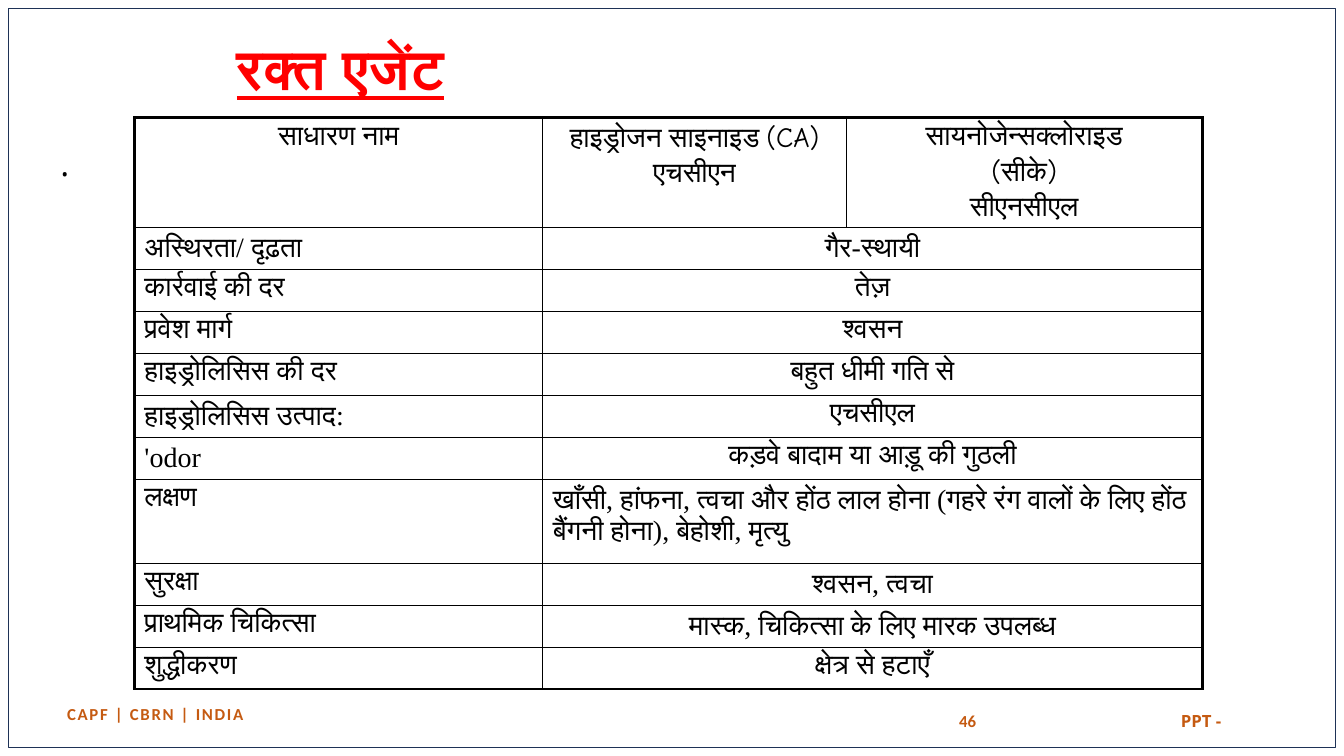
from pptx import Presentation
from pptx.dml.color import RGBColor
from pptx.enum.shapes import MSO_SHAPE
from pptx.enum.text import MSO_ANCHOR, MSO_AUTO_SIZE, PP_ALIGN
from pptx.oxml.ns import qn
from pptx.util import Pt
from lxml import etree

PX = 9525  # EMU in one px, 96 px to the inch
SLIDE_WIDTH, SLIDE_HEIGHT = 1280, 720
COLORS = {"ink": "000000", "title": "FF0000", "footer": "C55A11", "frame": "1E3256"}
LEFT, CENTER = PP_ALIGN.LEFT, PP_ALIGN.CENTER
TOP, MIDDLE = MSO_ANCHOR.TOP, MSO_ANCHOR.MIDDLE
RECTANGLE = MSO_SHAPE.RECTANGLE
COMIC, TIMES, SANS, CALIBRI = "Comic Neue", "Times New Roman", "Open Sans", "Calibri"
NO_GRID_STYLE = "{2D5ABB26-0587-4C30-8999-92F81FD0307C}"
THICK, THIN = Pt(2.25), Pt(1)

COLUMN_WIDTHS = [389, 289, 339]
HEADER_HEIGHT, ROW_HEIGHT = 89, 40
# Each header cell: paragraphs, each a list of (text, font) runs
HEADER = [
    [[("साधारण नाम", COMIC)]],
    [[("हाइड्रोजन साइनाइड (CA)", COMIC)], [("एचसीएन", COMIC)]],
    [[("सायनोजेन्स", COMIC), ("क्लोराइड", TIMES)], [("(सीके)", COMIC)], [("सीएनसीएल", COMIC)]],
]
# Property, value, height in rows, alignment of the value
PROPERTIES = [
    ("अस्थिरता/ दृढ़ता", "गैर-स्थायी", 1, CENTER),
    ("कार्रवाई की दर", "तेज़", 1, CENTER),
    ("प्रवेश मार्ग", "श्वसन", 1, CENTER),
    ("हाइड्रोलिसिस की दर", "बहुत धीमी गति से", 1, CENTER),
    ("हाइड्रोलिसिस उत्पाद:", "एचसीएल", 1, CENTER),
    ("'odor", "कड़वे बादाम या आड़ू की गुठली", 1, CENTER),
    ("लक्षण", "खाँसी, हांफना, त्वचा और होंठ लाल होना (गहरे रंग वालों के लिए होंठ "
              "बैंगनी होना), बेहोशी, मृत्यु", 2, LEFT),
    ("सुरक्षा", "श्वसन, त्वचा", 1, CENTER),
    ("प्राथमिक चिकित्सा", "मास्क, चिकित्सा के लिए मारक उपलब्ध", 1, CENTER),
    ("शुद्धीकरण", "क्षेत्र से हटाएँ", 1, CENTER),
]


def scaled(box):
    return [length * PX for length in box]


def add_run(paragraph, text, font_name, size, color, bold=False, underline=False):
    run = paragraph.add_run()
    run.text = text
    font = run.font
    font.name, font.size, font.bold, font.underline = font_name, Pt(size), bold, underline
    font.color.rgb = RGBColor.from_string(COLORS[color])
    return run


def add_frame(slide, box):
    frame = slide.shapes.add_shape(RECTANGLE, *scaled(box))
    frame.shadow.inherit = False
    frame.fill.background()
    frame.line.color.rgb = RGBColor.from_string(COLORS["frame"])
    frame.line.width = Pt(1)


def place(placeholder, box, anchor):
    placeholder.left, placeholder.top, placeholder.width, placeholder.height = scaled(box)
    text_frame = placeholder.text_frame
    text_frame.auto_size = MSO_AUTO_SIZE.NONE
    text_frame.vertical_anchor = anchor
    paragraph = text_frame.paragraphs[0]
    paragraph.alignment = LEFT
    paragraph.line_spacing = 0.9
    paragraph.space_before = Pt(0)
    return paragraph


def add_title(slide, box):
    paragraph = place(slide.shapes.title, box, MIDDLE)
    add_run(paragraph, "रक्त एजेंट", SANS, 40, "title", bold=True, underline=True)


def add_body(slide, box):
    paragraph = place(slide.placeholders[1], box, TOP)
    properties = paragraph._p.get_or_add_pPr()
    properties.set("marL", "0")
    properties.set("indent", "0")
    etree.SubElement(properties, qn("a:buNone"))
    add_run(paragraph, ".", SANS, 24, "ink")


def set_borders(cell, widths):
    properties = cell._tc.get_or_add_tcPr()
    for position, (side, width) in enumerate(widths.items()):
        line = etree.Element(qn("a:" + side), w=str(int(width)))
        fill = etree.SubElement(line, qn("a:solidFill"))
        etree.SubElement(fill, qn("a:srgbClr"), val=COLORS["ink"])
        properties.insert(position, line)


def fill_cell(cell, paragraphs, alignment):
    cell.fill.background()
    text_frame = cell.text_frame
    for index, runs in enumerate(paragraphs):
        paragraph = text_frame.add_paragraph() if index else text_frame.paragraphs[0]
        paragraph.alignment = alignment
        paragraph.space_before = Pt(4 if index else 0)
        for text, font_name in runs:
            add_run(paragraph, text, font_name, 20, "ink")


def add_agent_table(slide, left, top):
    heights = [HEADER_HEIGHT] + [ROW_HEIGHT * units for _, _, units, _ in PROPERTIES]
    box = (left, top, sum(COLUMN_WIDTHS), sum(heights))
    table_frame = slide.shapes.add_table(len(heights), len(COLUMN_WIDTHS), *scaled(box))
    table = table_frame.table
    table.first_row = table.horz_banding = False
    table_frame._element.find(".//" + qn("a:tableStyleId")).text = NO_GRID_STYLE
    for column, width in zip(table.columns, COLUMN_WIDTHS):
        column.width = width * PX
    for row, height in zip(table.rows, heights):
        row.height = height * PX

    # Texts
    for index, paragraphs in enumerate(HEADER):
        fill_cell(table.cell(0, index), paragraphs, CENTER)
    for index, (name, value, _, alignment) in enumerate(PROPERTIES, start=1):
        table.cell(index, 1).merge(table.cell(index, 2))
        fill_cell(table.cell(index, 0), [[(name, TIMES)]], LEFT)
        fill_cell(table.cell(index, 1), [[(value, TIMES)]], alignment)

    # Thick outer edge, thin inner lines
    last_row, last_column = len(heights) - 1, len(COLUMN_WIDTHS) - 1
    for row in range(last_row + 1):
        for column in range(last_column + 1):
            cell = table.cell(row, column)
            if cell.is_spanned:
                continue
            at_right = column == last_column or cell.is_merge_origin
            set_borders(cell, {
                "lnL": THIN if column else THICK,
                "lnR": THICK if at_right else THIN,
                "lnT": THIN if row else THICK,
                "lnB": THICK if row == last_row else THIN,
            })


def add_label(slide, box, text, font_name, alignment, anchor=TOP, spacing=0):
    text_frame = slide.shapes.add_textbox(*scaled(box)).text_frame
    text_frame.word_wrap = True
    text_frame.vertical_anchor = anchor
    text_frame.margin_top = text_frame.margin_bottom = 9 * PX
    paragraph = text_frame.paragraphs[0]
    paragraph.alignment = alignment
    run = add_run(paragraph, text, font_name, 12, "footer", bold=True)
    if spacing:
        run.font._element.set("spc", str(spacing))


def add_footer(slide, top):
    add_label(slide, (16, top, 264, 36), "CAPF | CBRN | INDIA", CALIBRI, CENTER, spacing=120)
    add_label(slide, (1104, top + 7, 80, 36), "PPT -", SANS, CENTER)
    add_label(slide, (904, top + 6, 288, 38), "46", CALIBRI, LEFT, anchor=MIDDLE)


def main():
    presentation = Presentation()
    presentation.slide_width = SLIDE_WIDTH * PX
    presentation.slide_height = SLIDE_HEIGHT * PX
    slide = presentation.slides.add_slide(presentation.slide_layouts[1])
    add_frame(slide, (8, 8, SLIDE_WIDTH - 16, SLIDE_HEIGHT - 16))
    add_title(slide, (216, 8, 864, 120))
    add_body(slide, (48, 136, 1184, 480))
    add_agent_table(slide, 128, 112)
    add_footer(slide, 661)
    presentation.save("out.pptx")


if __name__ == "__main__":
    main()
